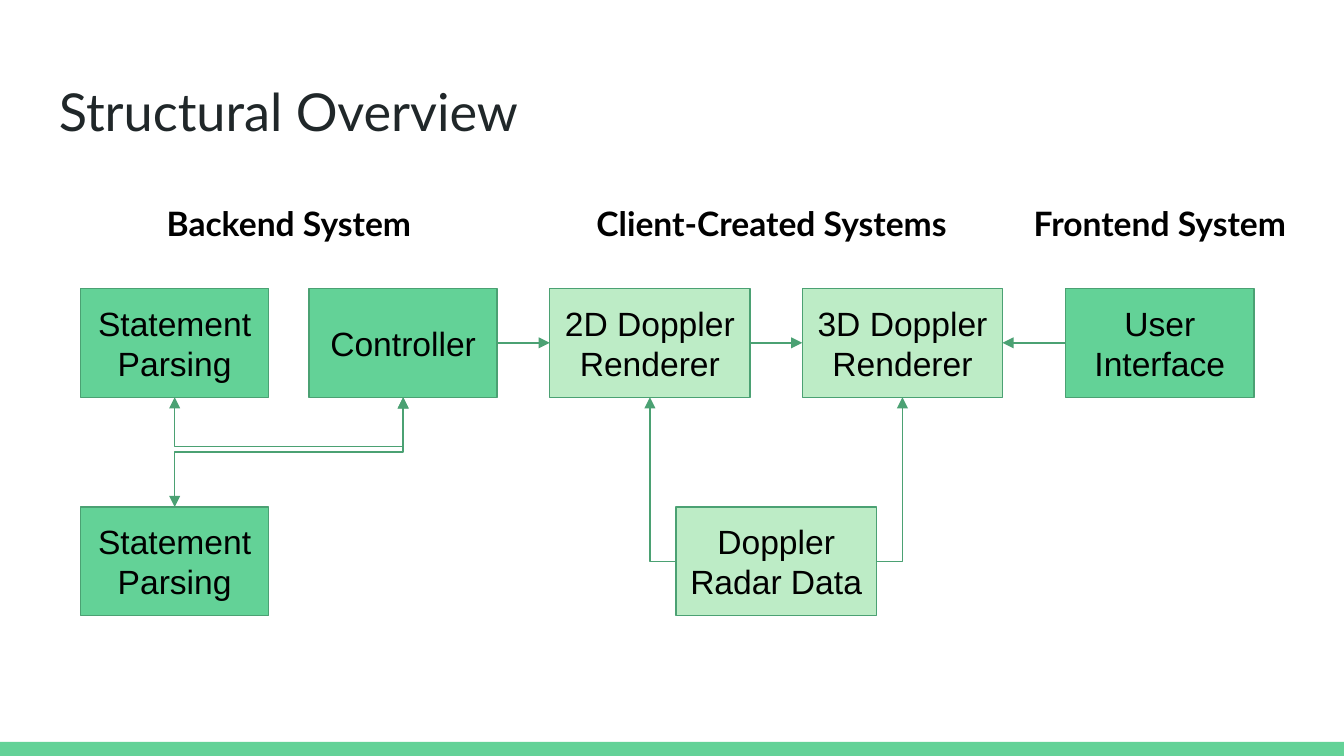
from lxml import etree
from pptx import Presentation
from pptx.dml.color import RGBColor
from pptx.enum import shapes, text
from pptx.oxml import ns
from pptx import util as u

COLORS = {"green": "63D297", "mint": "BDECC6", "line": "4BA173",
          "title": "202729", "black": "000000", "white": "FFFFFF"}
CELL = u.Inches(0.1)
UPPER, LOWER = 21.46, 37.72
NARROW, WIDE, HEIGHT = 14, 14.9, 8.1


def grid(count):
    return u.Emu(round(count * CELL))


def color(name):
    return RGBColor.from_string(COLORS[name])


def write(box, words, font, size, ink, align, anchor, bold=False):
    frame = box.text_frame
    frame.word_wrap = True
    frame.vertical_anchor = anchor
    frame.margin_left = frame.margin_right = grid(1)
    frame.margin_top = frame.margin_bottom = grid(1)
    para = frame.paragraphs[0]
    para.alignment = align
    span = para.add_run()
    span.text = words
    span.font.name = font
    span.font.size = u.Pt(size)
    span.font.bold = bold
    span.font.color.rgb = color(ink)


def add_label(page, words, left, top, width, height, size, ink, align, bold):
    box = page.shapes.add_textbox(*map(grid, (left, top, width, height)))
    write(box, words, "Lato", size, ink, align, text.MSO_ANCHOR.TOP, bold)


def add_rectangle(page, left, top, width, height, fill):
    box = page.shapes.add_shape(shapes.MSO_SHAPE.RECTANGLE,
                                *map(grid, (left, top, width, height)))
    box.shadow.inherit = False
    box.fill.solid()
    box.fill.fore_color.rgb = color(fill)
    box.line.fill.background()
    return box


def add_block(page, words, left, top, width, fill):
    box = add_rectangle(page, left, top, width, HEIGHT, fill)
    box.line.color.rgb = color("line")
    box.line.width = u.Pt(0.75)
    write(box, words, "Arial", 18, "black",
          text.PP_ALIGN.CENTER, text.MSO_ANCHOR.MIDDLE)
    return box


def side(box, across, down):
    return (box.left + round(box.width * across),
            box.top + round(box.height * down))


def add_arrow(page, start, end, heads, kind=shapes.MSO_CONNECTOR.STRAIGHT):
    link = page.shapes.add_connector(kind, *start, *end)
    link.line.color.rgb = color("line")
    link.line.width = u.Pt(0.75)
    outline = link.line._get_or_add_ln()
    for head in heads:
        etree.SubElement(outline, ns.qn(f"a:{head}"), type="triangle")
    etree.SubElement(link._element.spPr, ns.qn("a:effectLst"))
    return link


def add_elbow(page, start, end, heads, preset, turn, flip=False, bend=None):
    link = add_arrow(page, start, end, heads, shapes.MSO_CONNECTOR.ELBOW)
    run, rise = abs(end[0] - start[0]), abs(end[1] - start[1])
    link.left = (start[0] + end[0] - rise) // 2
    link.top = (start[1] + end[1] - run) // 2
    link.width, link.height = rise, run
    frame = link._element.spPr.find(ns.qn("a:xfrm"))
    for name in ("flipH", "flipV"):
        frame.attrib.pop(name, None)
    frame.set("rot", str(turn * 60000))
    if flip:
        frame.set("flipH", "1")
    shape = link._element.spPr.find(ns.qn("a:prstGeom"))
    shape.set("prst", preset)
    if bend is not None:
        guides = shape.find(ns.qn("a:avLst"))
        if guides is None:
            guides = etree.SubElement(shape, ns.qn("a:avLst"))
        etree.SubElement(guides, ns.qn("a:gd"), name="adj1",
                         fmla=f"val {round(bend * 100000)}")


def add_links(page, blocks):
    parser, store, control, flat, solid, screen, radar = blocks
    for left, right, head in ((control, flat, "tailEnd"),
                              (flat, solid, "tailEnd"),
                              (solid, screen, "headEnd")):
        add_arrow(page, side(left, 1, 0.5), side(right, 0, 0.5), [head])
    add_elbow(page, side(flat, 0.5, 1), side(radar, 0, 0.5),
              ["headEnd"], "bentConnector2", 270, True)
    add_elbow(page, side(solid, 0.5, 1), side(radar, 1, 0.5),
              ["headEnd"], "bentConnector2", 90)
    both = ["headEnd", "tailEnd"]
    add_elbow(page, side(store, 0.5, 0), side(control, 0.5, 1),
              both, "bentConnector3", 270, bend=0.5)
    across, down = side(control, 0.5, 1)
    drop = grid(0.01)
    add_elbow(page, side(parser, 0.5, 1), (across, down + drop),
              both, "bentConnector3", 270, True, grid(3.12) / drop)


def main():
    deck = Presentation()
    deck.slide_width, deck.slide_height = grid(100), grid(56.25)
    page = deck.slides.add_slide(deck.slide_layouts[6])
    page.background.fill.solid()
    page.background.fill.fore_color.rgb = color("white")
    add_rectangle(page, 0, 55.2, 100, 1.05, "green")
    left, center = text.PP_ALIGN.LEFT, text.PP_ALIGN.CENTER
    add_label(page, "Structural Overview", 3.4, 4.9, 93.2, 6.3,
              28, "title", left, False)
    blocks = [add_block(page, *block) for block in (
        ("Statement Parsing", 6, UPPER, NARROW, "green"),
        ("Statement Parsing", 6, LOWER, NARROW, "green"),
        ("Controller", 23, UPPER, NARROW, "green"),
        ("2D Doppler Renderer", 40.9, UPPER, WIDE, "mint"),
        ("3D Doppler Renderer", 59.7, UPPER, WIDE, "mint"),
        ("User Interface", 79.3, UPPER, NARROW, "green"),
        ("Doppler Radar Data", 50.3, LOWER, WIDE, "mint"))]
    add_links(page, blocks)
    for words, start, align in (("Backend System", 7.2, center),
                                ("Client-Created Systems", 43.4, left),
                                ("Frontend System", 72, center)):
        add_label(page, words, start, 14.1, 28.6, 5.1, 18, "black", align, True)
    deck.save("out.pptx")


if __name__ == "__main__":
    main()
